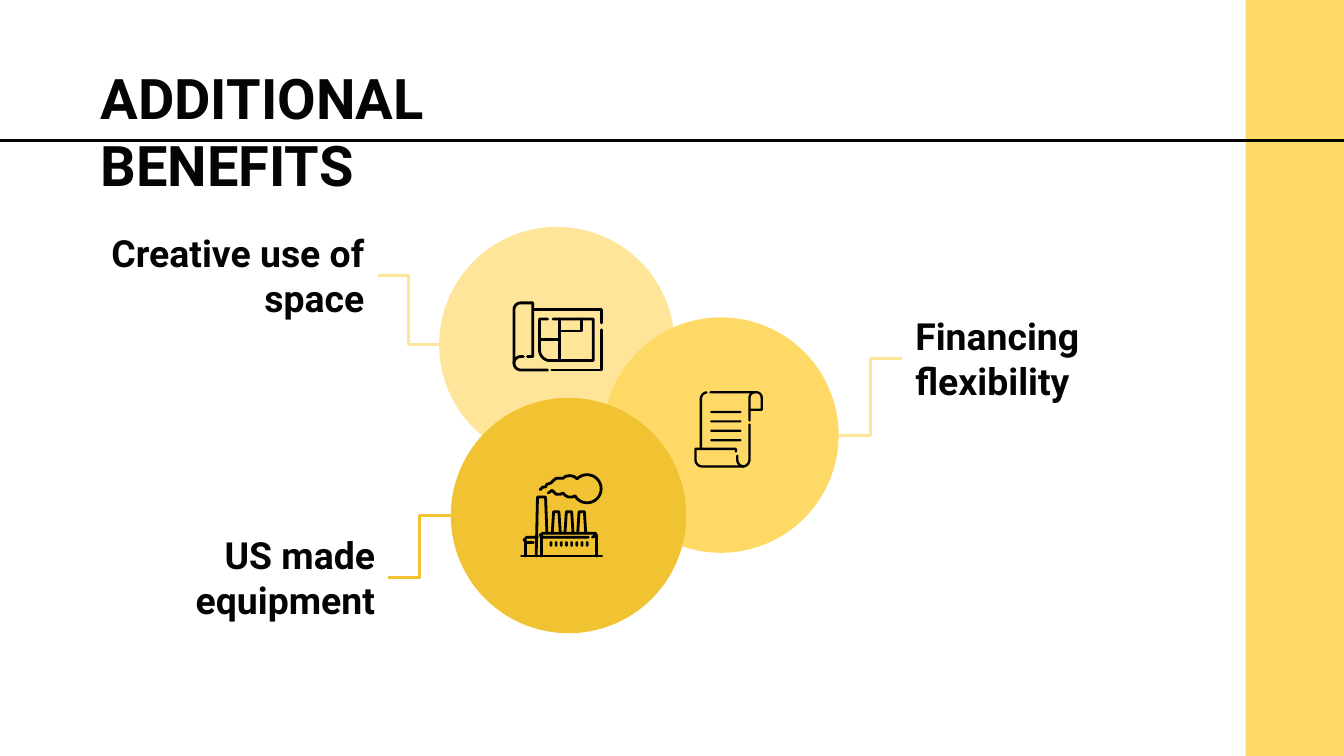
import math

import pptx
import pptx.dml.color
import pptx.enum.shapes
import pptx.enum.text
import pptx.oxml
import pptx.oxml.ns
import pptx.util

Cm = pptx.util.Cm
RGBColor = pptx.dml.color.RGBColor
SHAPE = pptx.enum.shapes.MSO_SHAPE
ALIGN = pptx.enum.text.PP_ALIGN
ANCHOR = pptx.enum.text.MSO_ANCHOR
qn = pptx.oxml.ns.qn

INK = RGBColor(0x04, 0x04, 0x04)
BLACK = RGBColor(0x00, 0x00, 0x00)
PALE = RGBColor(0xFF, 0xE5, 0x99)
YELLOW = RGBColor(0xFF, 0xD9, 0x66)
GOLD = RGBColor(0xF1, 0xC2, 0x32)

FONT = "Roboto"
SLIDE_W, SLIDE_H = 25.4, 14.29
DIAMETER = 4.45
LABEL_H = 1.6
FINE = 100  # freeform points are whole numbers, so each grid unit is split


def arc(cx, cy, radius, start, end, steps=12):
    """Points along an arc; degrees run clockwise from the right."""
    angles = [math.radians(start + (end - start) * i / steps) for i in range(steps + 1)]
    return [(cx + radius * math.cos(a), cy + radius * math.sin(a)) for a in angles]


def pill(x, y, width, height):
    """Outline of a bar with round ends."""
    r = min(width, height) / 2
    right, bottom = x + width - r, y + height - r
    return [*arc(x + r, y + r, r, 180, 270), *arc(right, y + r, r, 270, 360),
            *arc(right, bottom, r, 0, 90), *arc(x + r, bottom, r, 90, 180)]


def blueprint_parts():
    """Drawn parts, each a list of strokes, and the solid bars."""
    corner = [[(66, 21), (66, 51), (29, 51)]]
    roll = [
        [(11, 41), (15, 41), (15, 1), *arc(6, 6, 5, 270, 180),
         *arc(6, 46, 5, 180, 90), (26, 51)],
        [*arc(6, 46, 5, 180, 270), (8, 41)],
        [(16, 6), (66, 6), (66, 16)],
    ]
    plan = [
        [(26, 13), (20, 13), *arc(28, 36, 8, 180, 90), (60, 44), (60, 13), (30, 13)],
        [(35, 13), (35, 44)],
        [(20, 28), (35, 28)],
        [(35, 22), (51, 22), (51, 13)],
    ]
    return [corner, roll, plan], []


def scroll_parts():
    """Drawn parts, each a list of strokes, and the solid bars."""
    sheet = [
        [*arc(10, 6, 5, 260, 180), (5, 43)],
        [(31, 45), (31, 43), (1, 43), *arc(6, 51, 5, 180, 90),
         *arc(36, 51, 5, 90, 0), (41, 25)],
        [(32, 48), *arc(37, 51, 5, 180, 90)],
    ]
    curl = [
        [(12, 1), *arc(46, 5, 4, 270, 360), (50, 14), (41, 14)],
        [(41, 22), *arc(45, 5, 4, 180, 270)],
    ]
    return [sheet, curl], [pill(12, 14.75 + 7 * i, 23, 1.6) for i in range(4)]


def factory_parts():
    """Drawn parts, each a list of strokes, and the solid bars."""
    smoke = [[(15, 12.5), (17, 10.5), (19, 10.5), (20, 8.5), (23, 7.5), (25, 5.5),
              (27, 4), (30, 4), (32, 4), (34, 2.5), (37, 2), (40, 2.5),
              *arc(50, 11.8, 10.5, 225, 510, 30),
              (39, 18), (36, 18), (34, 17), (32, 15), (30, 16), (27, 16),
              (24, 13), (21, 15)]]
    building = [
        [(1, 62), (61, 62)],
        [(13, 48), (5, 48), (3, 50), (5, 52), (10, 52)],
        [(4, 52), (4, 62)],
        [(12, 62), (13, 18), (19, 18), (20, 45)],
        [(51, 48), (17, 48), (15, 46.5), (17, 45), (56, 45), (57, 46.5), (54, 48)],
        [(16, 48), (16, 62)],
        [(57, 46.5), (57, 62)],
    ]
    building += [[(x, 45), (x + 1, 29), (x + 5, 29), (x + 6, 45)]
                 for x in (24, 33.5, 43)]
    return [building, smoke], [pill(22 + 3.86 * i, 51, 2, 4) for i in range(8)]


def add_freeform(slide, left, top, unit, strokes, closed):
    """Join strokes, given in grid units, into one freeform."""
    first, *others = [[(x * FINE, y * FINE) for x, y in stroke] for stroke in strokes]
    builder = slide.shapes.build_freeform(*first[0], scale=unit / FINE)
    builder.add_line_segments(first[1:], close=closed)
    for stroke in others:
        builder.move_to(*stroke[0])
        builder.add_line_segments(stroke[1:], close=closed)
    freeform = builder.convert_to_shape(Cm(left), Cm(top))
    freeform.shadow.inherit = False
    return freeform


def add_line_icon(slide, left, top, width, columns, parts, weight):
    """Draw an icon on a grid that is `columns` units wide."""
    drawn, bars = parts
    unit = Cm(width) / columns
    for strokes in drawn:
        outline = add_freeform(slide, left, top, unit, strokes, closed=False)
        outline.fill.background()
        outline.line.color.rgb = BLACK
        outline.line.width = pptx.util.Pt(weight)
        outline.element.spPr.find(qn("a:ln")).set("cap", "rnd")
    for bar in bars:
        solid = add_freeform(slide, left, top, unit, [bar], closed=True)
        paint(solid, BLACK)


def paint(shape, color):
    shape.fill.solid()
    shape.fill.fore_color.rgb = color
    shape.line.fill.background()


def add_filled(slide, preset, left, top, width, height, color):
    filled = slide.shapes.add_shape(preset, Cm(left), Cm(top), Cm(width), Cm(height))
    filled.shadow.inherit = False
    paint(filled, color)


def add_line(slide, kind, start, end, color):
    line = slide.shapes.add_connector(kind, *map(Cm, start + end))
    line.line.color.rgb = color
    line.line.width = pptx.util.Pt(1.5)
    line.element.spPr.append(pptx.oxml.parse_xml(
        '<a:effectLst xmlns:a="http://schemas.openxmlformats.org/drawingml/2006/main"/>'))


def add_heading(slide, left, top, width, height, words, size,
                align=ALIGN.LEFT, anchor=ANCHOR.TOP):
    frame = slide.shapes.add_textbox(Cm(left), Cm(top), Cm(width), Cm(height)).text_frame
    frame.word_wrap = True
    frame.vertical_anchor = anchor
    frame.margin_left = frame.margin_right = Cm(0.25)
    frame.margin_top = frame.margin_bottom = Cm(0.25)
    paragraph = frame.paragraphs[0]
    paragraph.alignment = align
    run = paragraph.add_run()
    run.text = words
    run.font.name = FONT
    run.font.size = pptx.util.Pt(size)
    run.font.bold = True
    run.font.color.rgb = INK


def add_frame(slide, width, height):
    """Side band, title rule and title."""
    band = 1.86
    add_filled(slide, SHAPE.RECTANGLE, width - band, 0, band, height, YELLOW)
    add_line(slide, pptx.enum.shapes.MSO_CONNECTOR.STRAIGHT, (0, 2.65), (width, 2.65), INK)
    add_heading(slide, 1.65, 0.95, 10.69, 1.88, "ADDITIONAL BENEFITS", 30)


def add_benefit(slide, left, top, color, icon, label, link_color):
    """Circle at left, top; the icon is offset from it, the label is on the page."""
    add_filled(slide, SHAPE.OVAL, left, top, DIAMETER, DIAMETER, color)
    icon_dx, icon_dy, *drawing = icon
    add_line_icon(slide, left + icon_dx, top + icon_dy, *drawing)

    words, label_left, label_top, label_width = label
    on_left = label_left < left
    add_heading(slide, label_left, label_top, label_width, LABEL_H, words, 20,
                ALIGN.RIGHT if on_left else ALIGN.LEFT, ANCHOR.MIDDLE)
    label_edge = label_left + label_width if on_left else label_left
    circle_edge = left if on_left else left + DIAMETER
    add_line(slide, pptx.enum.shapes.MSO_CONNECTOR.ELBOW,
             (label_edge, label_top + LABEL_H / 2),
             (circle_edge, top + DIAMETER / 2), link_color)


def main():
    deck = pptx.Presentation()
    deck.slide_width, deck.slide_height = Cm(SLIDE_W), Cm(SLIDE_H)
    slide = deck.slides.add_slide(deck.slide_layouts[6])
    add_frame(slide, SLIDE_W, SLIDE_H)
    add_benefit(slide, 8.3, 4.29, PALE, (1.39, 1.41, 1.7, 67, blueprint_parts(), 1.5),
                ("Creative use of space", 0.64, 4.4, 6.5), PALE)
    add_benefit(slide, 11.4, 6, YELLOW, (1.72, 1.39, 1.3, 51, scroll_parts(), 1.25),
                ("Financing flexibility", 17.05, 5.97, 6.45), PALE)
    add_benefit(slide, 8.52, 7.52, GOLD, (1.31, 1.42, 1.57, 62, factory_parts(), 1.5),
                ("US made equipment", 1.24, 10.11, 6.1), GOLD)
    deck.save("out.pptx")


if __name__ == "__main__":
    main()
